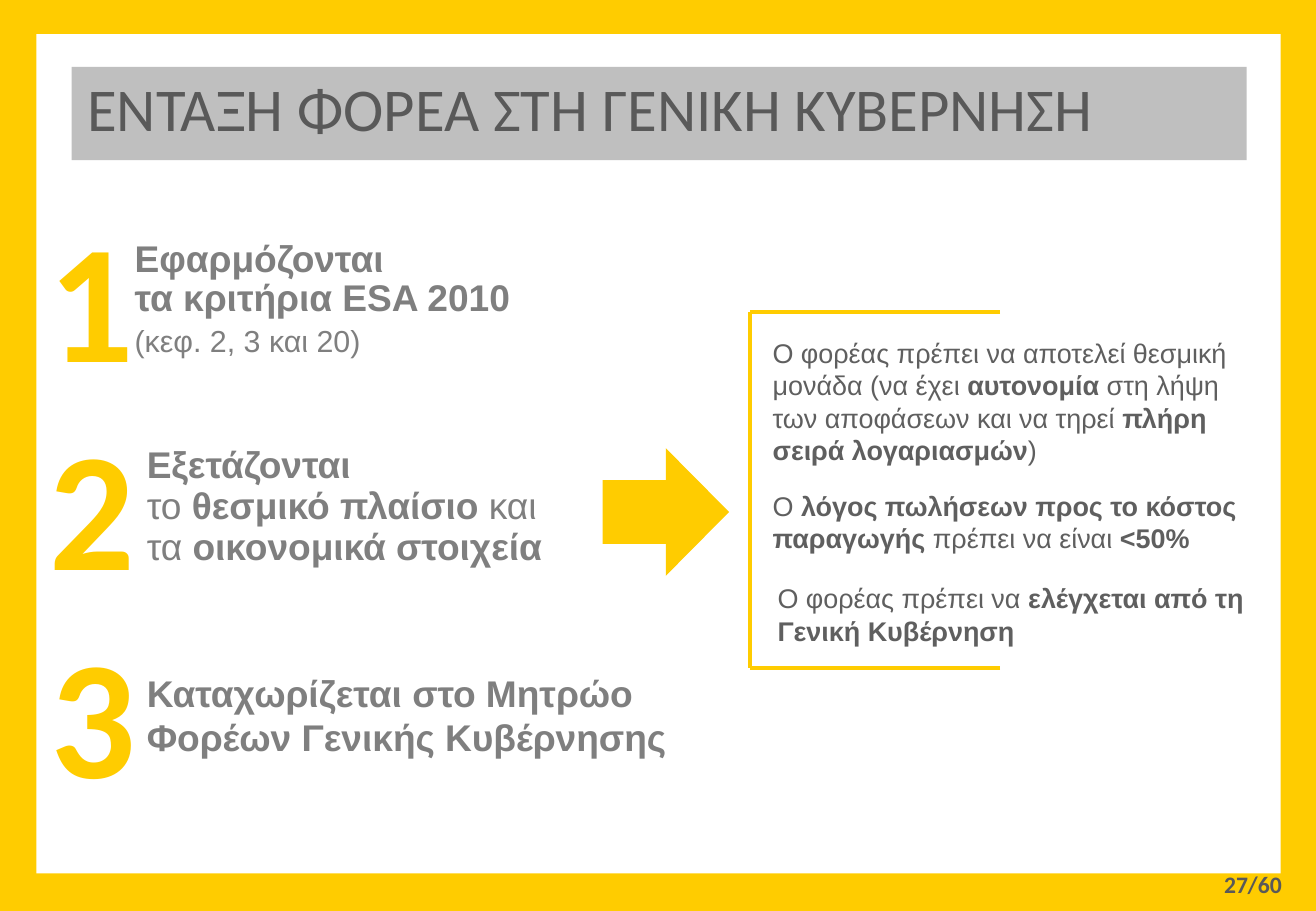
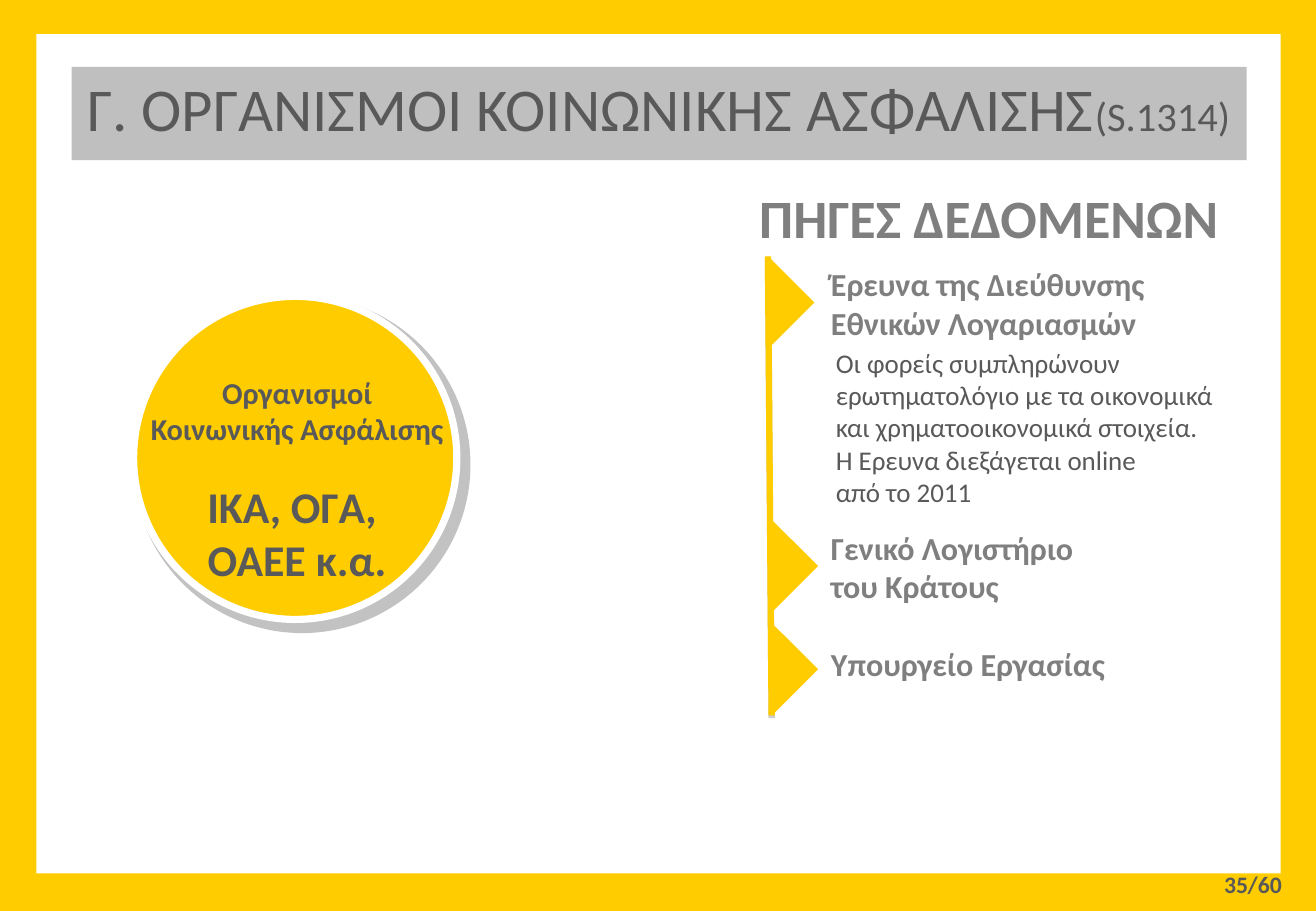
from lxml import etree
from pptx import Presentation
from pptx.dml.color import RGBColor
from pptx.enum.shapes import MSO_CONNECTOR, MSO_SHAPE
from pptx.enum.text import MSO_ANCHOR, PP_ALIGN
from pptx.oxml.ns import qn
from pptx.util import Inches, Pt

RECTANGLE, ELLIPSE = MSO_SHAPE.RECTANGLE, MSO_SHAPE.OVAL
ARROW, TRIANGLE = MSO_SHAPE.RIGHT_ARROW, MSO_SHAPE.RIGHT_TRIANGLE
STRAIGHT = MSO_CONNECTOR.STRAIGHT
LEFT, CENTER, RIGHT = PP_ALIGN.LEFT, PP_ALIGN.CENTER, PP_ALIGN.RIGHT
TOP = MSO_ANCHOR.TOP

COLORS = {
    "yellow": "FFCC00",
    "white": "FFFFFF",
    "band": "BFBFBF",
    "dark": "595959",
    "body": "5F5F5F",
    "heading": "7F7F7F",
    "shadow": "808080",
}
PAGE_WIDTH, PAGE_HEIGHT = 10.83, 7.5
TOTAL_PAGES = 60


def color(name):
    return RGBColor.from_string(COLORS[name])


def add_shadow(shape, opacity, distance, angle, scale=100):
    """Give a shape an outer shadow; distance in points, the rest in percent and degrees."""
    effects = etree.SubElement(shape._element.spPr, qn("a:effectLst"))
    shadow = etree.SubElement(
        effects, qn("a:outerShdw"), blurRad="0", dist=str(Pt(distance)),
        dir=str(angle * 60000), sx=str(scale * 1000), sy=str(scale * 1000),
        algn="tl", rotWithShape="0")
    tint = etree.SubElement(shadow, qn("a:srgbClr"), val=COLORS["shadow"])
    etree.SubElement(tint, qn("a:alpha"), val=str(opacity * 1000))


def add_figure(page, kind, left, top, width, height, fill):
    shape = page.shapes.add_shape(
        kind, Inches(left), Inches(top), Inches(width), Inches(height))
    shape.fill.solid()
    shape.fill.fore_color.rgb = color(fill)
    shape.line.fill.background()
    return shape


def add_plain(page, *figure):
    shape = add_figure(page, *figure)
    shape.shadow.inherit = False
    return shape


def add_line(page, start, end, weight):
    line = page.shapes.add_connector(
        STRAIGHT, *(Inches(value) for value in (*start, *end)))
    line.line.color.rgb = color("yellow")
    line.line.width = Pt(weight)
    return line


def add_plain_line(page, start, end, weight):
    line = add_line(page, start, end, weight)
    etree.SubElement(line._element.spPr, qn("a:effectLst"))


def emphasis(markup, size):
    """Turn text with *bold* parts into runs of (text, size, bold)."""
    return [(text, size, bool(index % 2))
            for index, text in enumerate(markup.split("*")) if text]


def add_text(page, left, top, width, height, paragraphs, tint,
             font="Calibri", align=LEFT, spacing=None):
    """Write a text box; paragraphs is a list of lists of runs."""
    box = page.shapes.add_textbox(
        Inches(left), Inches(top), Inches(width), Inches(height))
    frame = box.text_frame
    frame.word_wrap = True
    frame.vertical_anchor = TOP
    for index, runs in enumerate(paragraphs):
        para = frame.add_paragraph() if index else frame.paragraphs[0]
        para.alignment = align
        if spacing:
            para.line_spacing = Pt(spacing)
        for text, size, bold in runs:
            for number, line in enumerate(text.split("\n")):
                if number:
                    para.add_line_break()
                if not line:
                    continue
                span = para.add_run()
                span.text = line
                span.font.name = font
                span.font.size = Pt(size)
                span.font.bold = bold
                span.font.color.rgb = color(tint)
    return frame


def add_page(deck, number, title):
    """Start a slide with the frame, title band and page number."""
    page = deck.slides.add_slide(deck.slide_layouts[6])
    add_plain(page, RECTANGLE, 0, 0, PAGE_WIDTH, PAGE_HEIGHT, "yellow")
    add_plain(page, RECTANGLE, 0.3, 0.28, 10.24, 6.91, "white")
    add_plain(page, RECTANGLE, 0.59, 0.55, 9.67, 0.77, "band")
    add_text(page, 0.62, 0.53, 9.91, 0.54, [title], "dark")
    add_text(page, 9.93, 7.11, 0.44, 0.4, [[(str(number), 14, True)]], "dark", align=RIGHT)
    add_text(page, 10.17, 7.11, 0.6, 0.34, [[(f"/{TOTAL_PAGES}", 14, True)]], "dark")
    return page


def add_step(page, number, number_at, text_at, height, runs, spacing=None):
    """Large numeral with its step text."""
    add_text(page, *number_at, 0.95, 1.78, [[(str(number), 100, True)]], "yellow")
    add_text(page, *text_at, 4.5, height, [runs], "heading", "Arial", spacing=spacing)


def add_criteria(page, left, top, width, height, criteria):
    """Open bracket with criteria; each is (x offset, y offset, height, markup)."""
    bottom = top + height
    for y in (top, bottom):
        add_plain_line(page, (left + width, y), (left, y), 2)
    add_plain_line(page, (left, top), (left, bottom), 2.5)
    for shift, drop, box_height, markup in criteria:
        add_text(page, left + shift, top + drop, 4.11, box_height,
                 [emphasis(markup, 16)], "body", "Arial")


def add_disc(page, left, top, diameter):
    """Ringed circle naming the sector and its members."""
    disc = add_figure(page, ELLIPSE, left, top, diameter, diameter, "yellow")
    disc.line.color.rgb = color("white")
    disc.line.width = Pt(4.25)
    add_shadow(disc, 47, 3, 45, 102)
    frame = add_text(page, left - 0.21, top + 0.59, 3.11, 1.85, [
        [("Οργανισμοί", 18, True)],
        [("Κοινωνικής Ασφάλισης", 18, True)],
        [("ΙΚΑ, ΟΓΑ, \nΟΑΕΕ κ.α.", 26, True)],
    ], "dark", align=CENTER)
    frame.paragraphs[2].space_before = Pt(19.5)


def add_sources(page, left, top, sources):
    """Spine with a pointer and heading per source: (x, pointer y, text y, height, text)."""
    add_text(page, left, top, 4.1, 0.64, [[("ΠΗΓΕΣ ΔΕΔΟΜΕΝΩΝ", 32, True)]], "heading")
    spine = add_line(page, (left + 0.17, top + 0.64), (left + 0.2, top + 4.42), 3.75)
    add_shadow(spine, 38, 1.6, 90)
    for shift, pointer_y, text_y, height, text in sources:
        pointer = add_plain(page, TRIANGLE, left + shift, top + pointer_y,
                            0.54, 0.54, "yellow")
        pointer.rotation = 225
        add_text(page, left + 0.59, top + text_y, 3.1, height,
                 [[(text, 19, True)]], "heading")
    add_text(page, left + 0.63, top + 1.33, 3.4, 1.72, [
        [("Οι φορείς συμπληρώνουν ερωτηματολόγιο με τα οικονομικά "
          "και χρηματοοικονομικά στοιχεία.", 16, False)],
        [("Η Έρευνα διεξάγεται online", 16, False)],
        [("από το 2011", 16, False)],
    ], "dark")


def build_inclusion(deck):
    page = add_page(deck, 27, [("ΕΝΤΑΞΗ ΦΟΡΕΑ ΣΤΗ ΓΕΝΙΚΗ ΚΥΒΕΡΝΗΣΗ", 36, False)])
    # Steps
    add_step(page, 1, (0.3, 1.55), (1.01, 1.93), 1.07, [
        ("Εφαρμόζονται \nτα κριτήρια ESA 2010 \n", 22, True),
        ("(κεφ. 2, 3 και 20)", 18, False)], 23.4)
    add_step(page, 2, (0.31, 3.26), (1.11, 3.61), 1.12, emphasis(
        "*Εξετάζονται \n*το* θεσμικό πλαίσιο *και\nτα *οικονομικά στοιχεία*", 22), 24.4)
    add_step(page, 3, (0.32, 4.97), (1.11, 5.47), 0.84, [
        ("Καταχωρίζεται στο Μητρώο Φορέων Γενικής Κυβέρνησης", 22, True)])
    # Arrow to the criteria
    add_plain(page, ARROW, 4.96, 3.69, 1.04, 1.05, "yellow")
    add_criteria(page, 6.17, 2.57, 2.06, 2.93, [
        (0.09, 0.15, 1.18, "Ο φορέας πρέπει να αποτελεί θεσμική μονάδα (να έχει *αυτονομία* "
         "στη λήψη των αποφάσεων και να τηρεί *πλήρη σειρά λογαριασμών*)"),
        (0.09, 1.41, 0.64, "Ο *λόγος πωλήσεων προς το κόστος παραγωγής *"
         "πρέπει να είναι *<50%*"),
        (0.13, 2.17, 0.64, "Ο φορέας πρέπει να *ελέγχεται από τη Γενική Κυβέρνηση*"),
    ])


def build_social_security(deck):
    page = add_page(deck, 35, [
        ("Γ. ΟΡΓΑΝΙΣΜΟΙ ΚΟΙΝΩΝΙΚΗΣ ΑΣΦΑΛΙΣΗΣ", 36, False), ("(S.1314)", 24, False)])
    add_disc(page, 1.1, 2.44, 2.66)
    add_sources(page, 6.15, 1.47, [
        (-0.1, 0.75, 0.66, 0.76, "Έρευνα της Διεύθυνσης \nΕθνικών Λογαριασμών"),
        (-0.07, 2.92, 2.83, 0.74, "Γενικό Λογιστήριο\nτου Κράτους"),
        (-0.07, 3.77, 3.79, 0.42, "Υπουργείο Εργασίας"),
    ])


def main():
    deck = Presentation()
    deck.slide_width = Inches(PAGE_WIDTH)
    deck.slide_height = Inches(PAGE_HEIGHT)
    build_inclusion(deck)
    build_social_security(deck)
    deck.save("out.pptx")


if __name__ == "__main__":
    main()
